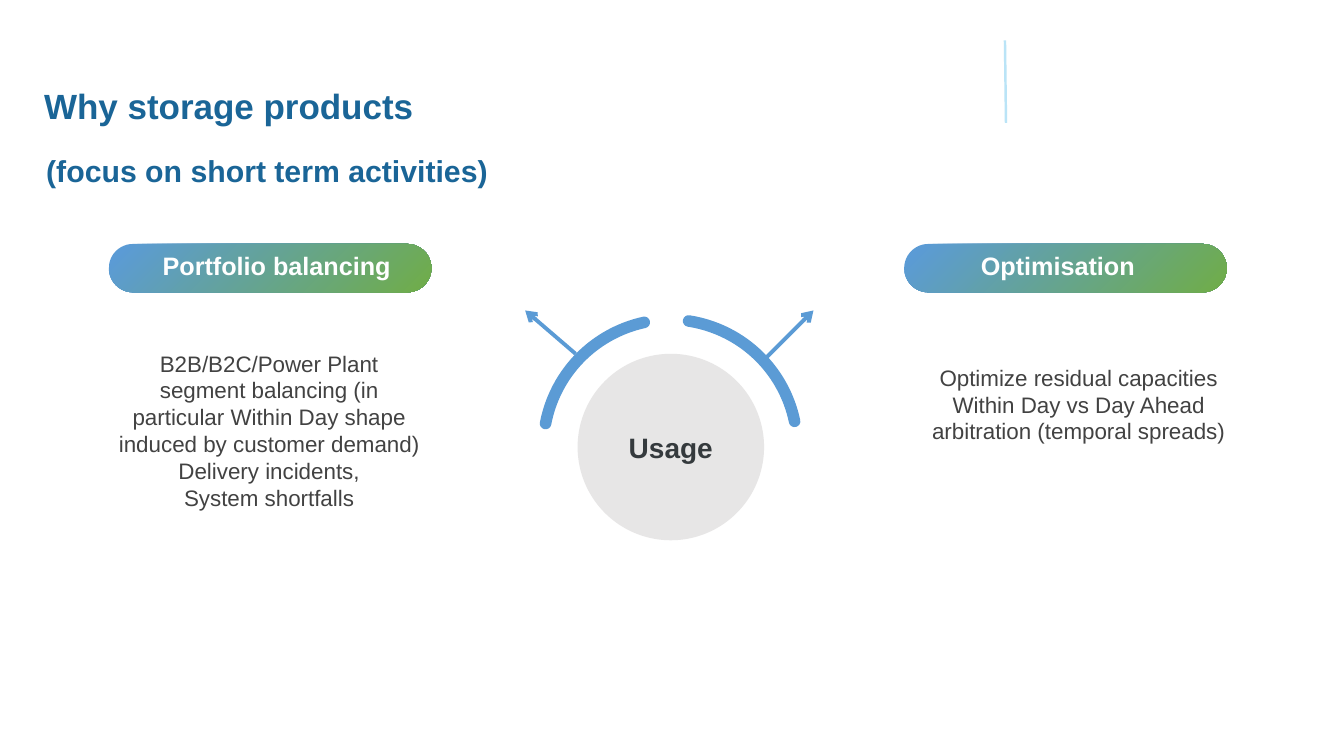
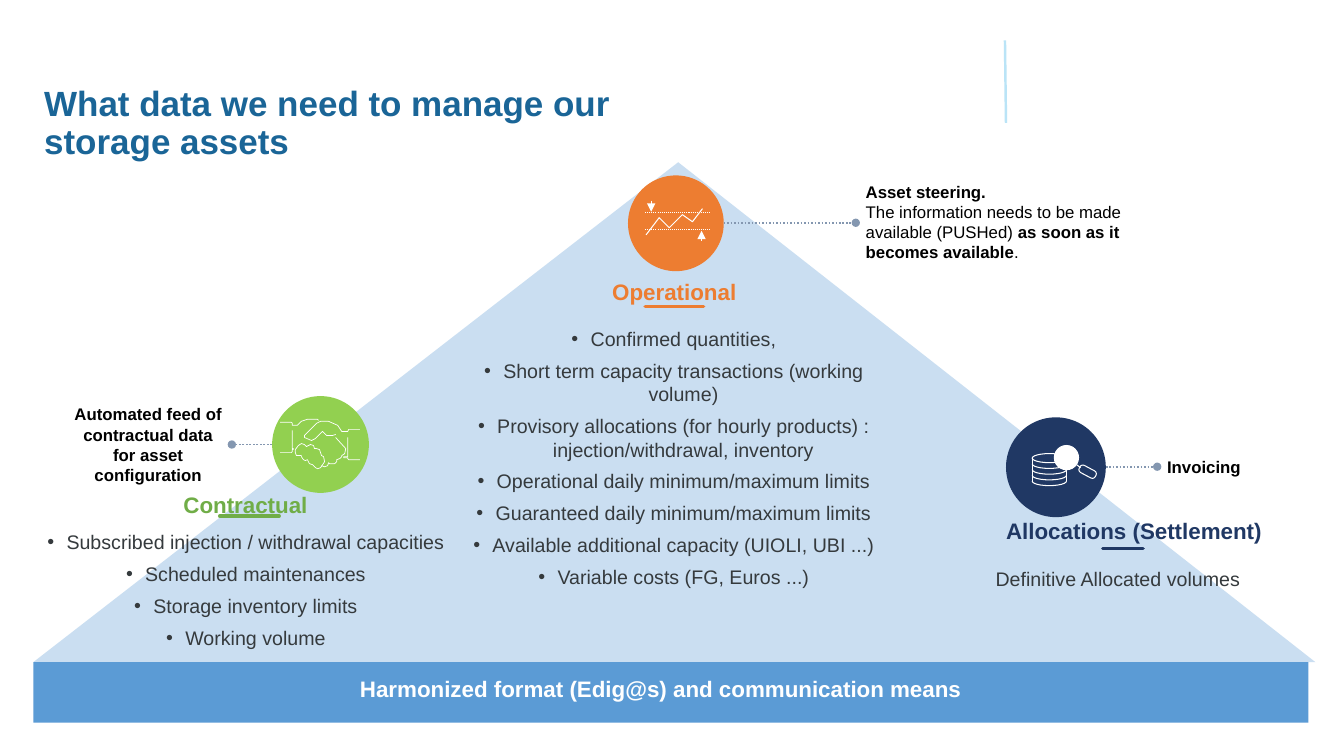
from lxml import etree
from pptx import Presentation
from pptx.dml.color import RGBColor
from pptx.enum.dml import MSO_LINE
from pptx.enum.shapes import MSO_CONNECTOR, MSO_SHAPE
from pptx.enum.text import MSO_ANCHOR, PP_ALIGN
from pptx.oxml.ns import qn
from pptx.util import Inches, Pt

STRAIGHT = MSO_CONNECTOR.STRAIGHT
ARC, ELLIPSE, RECTANGLE = MSO_SHAPE.ARC, MSO_SHAPE.OVAL, MSO_SHAPE.RECTANGLE
PILL, TRIANGLE = MSO_SHAPE.ROUNDED_RECTANGLE, MSO_SHAPE.ISOSCELES_TRIANGLE
LEFT, CENTER = PP_ALIGN.LEFT, PP_ALIGN.CENTER
TOP, MIDDLE = MSO_ANCHOR.TOP, MSO_ANCHOR.MIDDLE
DOTTED = MSO_LINE.ROUND_DOT

CELL = Inches(0.1)
COLUMNS, ROWS = 133.33, 75
FONT = "Arial"
COLORS = {
    "title": "1A6597", "rule": "BAE4F7", "blue": "5B9BD5", "green": "70AD47",
    "lime": "92D050", "orange": "ED7D31", "navy": "203864", "grey": "E7E6E6",
    "body": "424242", "dark": "353A3D", "callout": "8497B0",
    "white": "FFFFFF", "black": "000000",
}

HANDSHAKE = [
    [(33.3, 43.4), (34.3, 44.5), (34.2, 45), (33.9, 45.2), (33.9, 45.3),
     (33.7, 45.5), (33.4, 45.6), (33.4, 45.8), (33.2, 46), (32.7, 46),
     (32.6, 45.9), (32.5, 46.2), (32.2, 46.3), (31.9, 46.2)],
    [(32.1, 45.3), (31.9, 45.2), (31.7, 44.6), (31.4, 44.5), (31.2, 44.5),
     (31.1, 44.2), (30.8, 44.1), (30.4, 44.3), (30.2, 44.1), (29.9, 44),
     (29.6, 44.2), (29.3, 44.6), (29.3, 44.9), (29.4, 45.2), (29.7, 45.2),
     (29.9, 45.2), (29.9, 45.3), (30.1, 45.6), (30.3, 45.7), (30.5, 45.6),
     (30.7, 46), (31, 46.1), (31.1, 46.2), (31.3, 46.4), (31.5, 46.5),
     (31.8, 46.4), (32.2, 45.8), (32.1, 45.3)],
    [(34.5, 43.4), (34.5, 45.3), (34.1, 45.3), (34.1, 45.4), (34.5, 45.4),
     (34.5, 45.5), (34.6, 45.6), (35.7, 45.6)],
    [(35.7, 42.6), (34.6, 42.6), (34.5, 42.8), (33.9, 42.8), (33.5, 42.2),
     (32.6, 41.8), (31.8, 41.8), (31.4, 42), (30.2, 43.2), (30.2, 43.4),
     (30.9, 43.7), (31.3, 43.5), (32, 42.8), (32.4, 43.2), (33, 43.2),
     (33.3, 43.1)],
    [(27.8, 44.9), (28.9, 44.9), (29, 44.8), (29, 44.6), (29.1, 44.6),
     (29.1, 44.5), (29, 44.5), (29, 42.7)],
    [(31.6, 41.7), (31.5, 41.6), (30.5, 41.6), (29.9, 41.8), (29.5, 42.2),
     (29, 42.2), (29, 42), (28.9, 41.9), (27.8, 41.9)],
]
TREND = [(64.1, 23.3), (65.4, 21.6), (66.4, 22.6), (67.7, 21.3), (68.7, 22),
         (69.7, 20.7)]


def rgb(name):
    return RGBColor.from_string(COLORS[name])


def cells(*lengths):
    return [round(length * CELL) for length in lengths]


def write_text(frame, paragraphs, size, color, bold=False, align=CENTER,
               anchor=TOP, spacing=None, after=None, bullet=None):
    frame.word_wrap = True
    frame.vertical_anchor = anchor
    for index, spans in enumerate(paragraphs):
        para = frame.paragraphs[0] if index == 0 else frame.add_paragraph()
        para.alignment = align
        if spacing:
            para.line_spacing = spacing
        if after:
            para.space_after = Pt(after)
        if bullet:
            settings = para._p.get_or_add_pPr()
            indent = cells(1.9)[0]
            settings.set("marL", str(indent))
            settings.set("indent", str(-indent))
            etree.SubElement(settings, qn("a:buFont"), typeface=FONT)
            etree.SubElement(settings, qn("a:buChar"), char=bullet)
        if isinstance(spans, str):
            spans = [(spans, bold)]
        for text, strong in spans:
            span = para.add_run()
            span.text = text
            span.font.name = FONT
            span.font.size = Pt(size)
            span.font.bold = strong
            span.font.color.rgb = rgb(color)


class Storyboard:
    def __init__(self):
        self.deck = Presentation()
        self.deck.slide_width, self.deck.slide_height = cells(COLUMNS, ROWS)
        self.page = None

    def add_page(self):
        self.page = self.deck.slides.add_slide(self.deck.slide_layouts[6])
        self.line((99.7, 4), (99.8, 12.2), "rule", 1.75)

    def title(self, area, text, size=25):
        self.text(area, [text], size=size, color="title", bold=True,
                  align=LEFT, anchor=MIDDLE, spacing=0.9)

    def text(self, area, paragraphs, **style):
        box = self.page.shapes.add_textbox(*cells(*area))
        write_text(box.text_frame, paragraphs, **style)

    def stroke(self, shape, color, width, dash=None, cap=None, end=None):
        shape.line.color.rgb = rgb(color)
        shape.line.width = Pt(width)
        if dash:
            shape.line.dash_style = dash
        outline = shape.element.spPr.find(qn("a:ln"))
        if cap:
            outline.set("cap", cap)
        if end:
            etree.SubElement(outline, qn("a:tailEnd"), type=end)

    def line(self, start, finish, color, width, **style):
        connector = self.page.shapes.add_connector(
            STRAIGHT, *cells(*start, *finish))
        self.stroke(connector, color, width, **style)
        etree.SubElement(connector.element.spPr, qn("a:effectLst"))

    def shape(self, kind, area, fill=None, line=None, width=0.75, cap=None):
        shape = self.page.shapes.add_shape(kind, *cells(*area))
        self.finish(shape, fill, line, width, cap)
        return shape

    def finish(self, shape, fill, line, width, cap=None):
        shape.shadow.inherit = False
        if fill:
            shape.fill.solid()
            shape.fill.fore_color.rgb = rgb(fill)
        else:
            shape.fill.background()
        if line:
            self.stroke(shape, line, width, cap=cap)
        else:
            shape.line.fill.background()

    def arc(self, area, start, finish, color, width, cap=None):
        arc = self.shape(ARC, area, line=color, width=width, cap=cap)
        for index, degrees in enumerate((start, finish)):
            arc.adjustments[index] = degrees * 0.6

    def outline(self, points, width):
        first, *rest = [cells(*point) for point in points]
        builder = self.page.shapes.build_freeform(*first)
        builder.add_line_segments(rest, close=points[0] == points[-1])
        self.finish(builder.convert_to_shape(), None, "white", width)

    def pill(self, left, label_left, label_width, label):
        pill = self.shape(PILL, (left, 24.2, 32, 4.8))
        pill.adjustments[0] = 0.5
        pill.fill.gradient()
        pill.fill.gradient_angle = 315
        stops = zip(pill.fill.gradient_stops, ((0.05, "blue"), (1, "green")))
        for stop, (position, color) in stops:
            stop.position = position
            stop.color.rgb = rgb(color)
        self.text((label_left, 24.7, label_width, 3.7), [label], size=18,
                  color="white", bold=True, spacing=0.9)

    def topic(self, heading, color, heading_area, items, items_area,
              underline, bullet="•"):
        self.text(heading_area, [heading], size=16, color=color, bold=True)
        self.text(items_area, items, size=14, color="dark", after=6,
                  bullet=bullet)
        left, right, level = underline
        self.line((left, level), (right, level), color, 2.5, cap="rnd")

    def callout(self, start, finish, level, area, paragraphs, align=LEFT):
        self.line((start, level), (finish, level), "callout", 1.25,
                  dash=DOTTED, end="oval")
        self.text(area, paragraphs, size=12, color="black", bold=True,
                  align=align)

    def trend_icon(self):
        self.outline(TREND, 0.75)
        for level in (21.1, 22.8):
            self.line((64, level), (70.4, level), "white", 0.75, dash=DOTTED)
        for column, start, finish in ((64.6, 19.9, 21), (69.6, 23.9, 22.9)):
            self.line((column, start), (column, finish), "white", 0.75,
                      end="triangle")

    def coins_icon(self):
        left, width, top, height = 102.4, 3.4, 45, 0.9
        self.shape(ELLIPSE, (left, top, width, height), line="white")
        for layer in range(1, 5):
            area = (left, top + 0.57 * layer, width, height)
            self.arc(area, 0, 180, "white", 0.75)
        for column in (left, left + width):
            self.line((column, 45.5), (column, 47.7), "white", 0.75)
        self.shape(ELLIPSE, (104.6, 44.2, 2.4, 2.4), "white", "white")
        self.line((106.8, 46.1), (107.2, 46.4), "white", 0.75)
        handle = self.shape(PILL, (107, 46.4, 1.8, 0.8), line="white")
        handle.adjustments[0] = 0.4
        handle.rotation = 28

    def usage_page(self):
        self.add_page()
        self.title((3.6, 15.2, 118.1, 3.9), "(focus on short term activities)",
                   size=21.6)
        self.pill(10.8, 12.9, 29.1, "Portfolio balancing")
        self.pill(89.7, 89.5, 30.9, "Optimisation")
        self.text((10.6, 34.2, 32.2, 19.9), [
            "B2B/B2C/Power Plant segment balancing (in particular Within Day "
            "shape induced by customer demand)",
            "Delivery incidents,", "System shortfalls"],
            size=16, color="body")
        self.text((90.9, 35.6, 32.2, 11.8), [
            "Optimize residual capacities",
            "Within Day vs Day Ahead arbitration (temporal spreads)"],
            size=16, color="body")
        for start, tip in (((57.1, 35.1), (52.1, 30.8)),
                           ((75.6, 35.9), (80.7, 30.8))):
            self.line(start, tip, "blue", 2.75, end="arrow")
        hub = self.shape(ELLIPSE, (57.3, 35.1, 18.5, 18.5), "grey")
        frame = hub.text_frame
        frame.margin_left = frame.margin_right = 0
        frame.margin_top = frame.margin_bottom = 0
        write_text(frame, ["Usage"], size=20, color="dark", bold=True,
                   anchor=MIDDLE)
        for left, start, finish in ((53.7, 278.7, 348.2),
                                    (53.9, 190.8, 257.8)):
            self.arc((left, 31.7, 25.4, 25.4), start, finish, "blue", 8.25,
                     cap="rnd")
        self.title((3.4, 8.4, 127, 4.7), "Why storage products")

    def data_page(self):
        self.add_page()
        pyramid = self.shape(TRIANGLE, (3.3, 16.1, 127.2, 49.6), "blue")
        pyramid.adjustments[0] = 0.503
        tint = pyramid.element.spPr.find(".//" + qn("a:srgbClr"))
        etree.SubElement(tint, qn("a:alpha"), val="32000")
        self.topic("Contractual", "green", (1.4, 48.2, 45.9, 3.7), [
            "Subscribed injection / withdrawal capacities",
            "Scheduled maintenances", "Storage inventory limits",
            "Working volume"],
            (2.5, 52.1, 43.8, 15.3), (21.8, 27.7, 51.2))
        self.topic("Operational", "orange", (44.1, 27.1, 45.6, 3.7), [
            "Confirmed quantities,",
            "Short term capacity transactions (working volume)",
            "Provisory allocations (for hourly products) : "
            "injection/withdrawal, inventory",
            "Operational daily minimum/maximum limits",
            "Guaranteed daily minimum/maximum limits",
            "Available additional capacity (UIOLI, UBI ...)",
            "Variable costs (FG, Euros ...)"],
            (45.4, 31.9, 42.9, 36.7), (64, 69.8, 30.4))
        self.topic("Allocations (Settlement)", "navy", (94.7, 50.8, 35.6, 3.7),
                   ["Definitive Allocated volumes"], (95.7, 55.8, 30.4, 3.4),
                   (109.4, 113.4, 54.4), bullet=None)
        for left, top, size, color in ((27, 39.3, 9.6, "lime"),
                                       (62.3, 17.4, 9.5, "orange"),
                                       (99.8, 41.4, 9.9, "navy")):
            self.shape(ELLIPSE, (left, top, size, size), color)
        for points in HANDSHAKE:
            self.outline(points, 0.5)
        self.trend_icon()
        self.coins_icon()
        self.callout(71.8, 84.9, 22.1, (84.9, 17.5, 31.6, 9.1), [
            "Asset steering.",
            [("The information needs to be made available (PUSHed) ", False),
             ("as soon as it becomes available", True), (".", False)]])
        self.callout(109.7, 114.8, 46.3, (114.8, 44.8, 11.4, 3),
                     ["Invoicing"])
        self.callout(27, 23, 44.1, (6.4, 39.6, 16.6, 9.1), [
            "Automated feed of contractual data for asset configuration"],
            align=CENTER)
        self.shape(RECTANGLE, (3.3, 65.7, 126.5, 6), "blue")
        self.text((16.5, 66.5, 98.1, 3.7),
                  ["Harmonized format (Edig@s) and communication means"],
                  size=16, color="white", bold=True)
        self.title((3.4, 9, 67.1, 6.7),
                   "What data we need to manage our storage assets")


def main():
    board = Storyboard()
    board.usage_page()
    board.data_page()
    board.deck.save("out.pptx")


if __name__ == "__main__":
    main()
